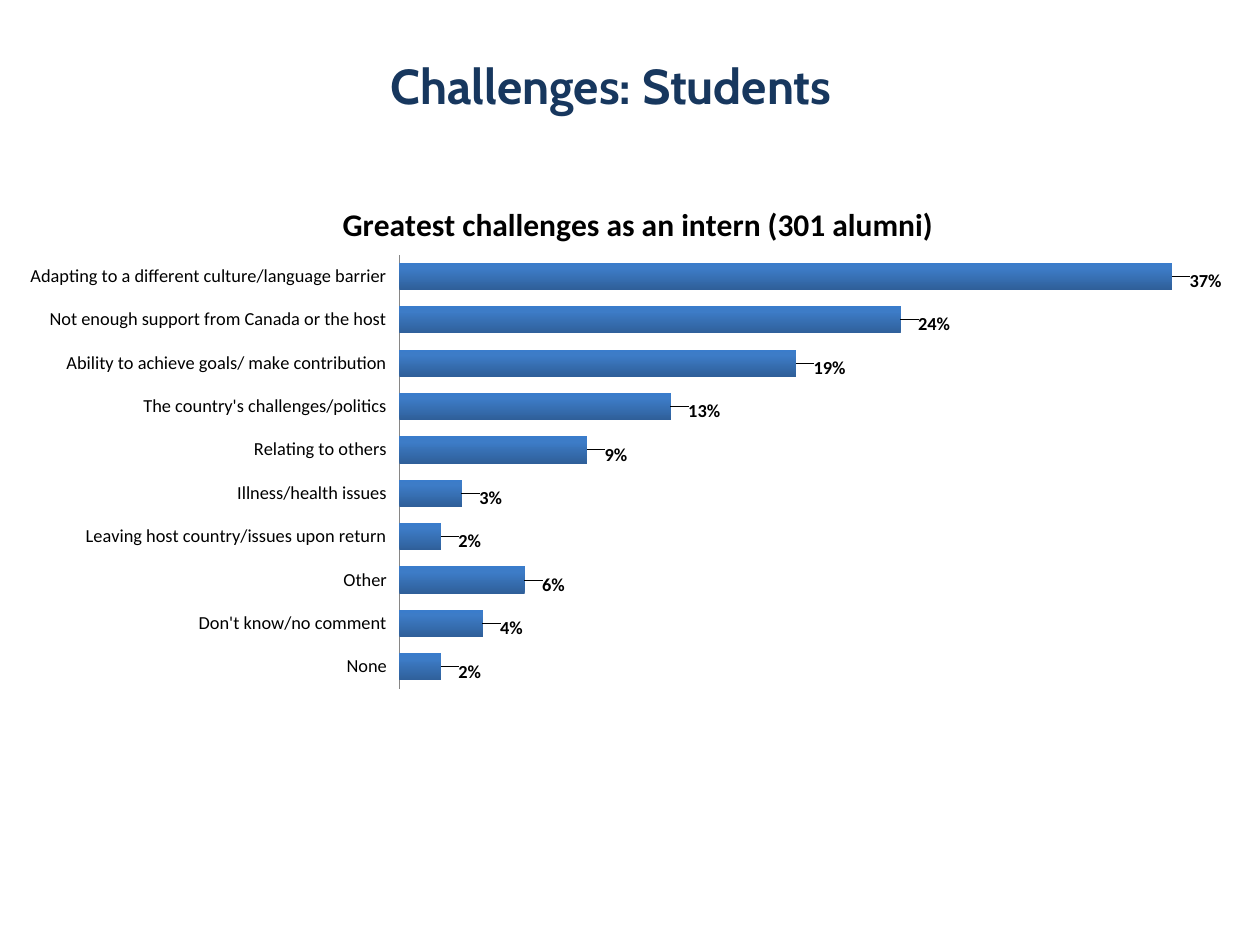
from dataclasses import dataclass

from pptx import Presentation
from pptx.chart.data import CategoryChartData
from pptx.dml.color import RGBColor
from pptx.enum.chart import XL_CHART_TYPE, XL_LABEL_POSITION, XL_TICK_LABEL_POSITION, XL_TICK_MARK
from pptx.enum.text import MSO_ANCHOR, PP_ALIGN
from pptx.oxml import parse_xml
from pptx.oxml.ns import nsdecls
from pptx.util import Inches, Pt

CHALLENGES = {
    "Adapting to a different culture/language barrier": 0.37,
    "Not enough support from Canada or the host": 0.24,
    "Ability to achieve goals/ make contribution": 0.19,
    "The country's challenges/politics": 0.13,
    "Relating to others": 0.09,
    "Illness/health issues": 0.03,
    "Leaving host country/issues upon return": 0.02,
    "Other": 0.06,
    "Don't know/no comment": 0.04,
    "None": 0.02,
}


@dataclass(frozen=True)
class Theme:
    heading_font: str = "Cabin"
    body_font: str = "Calibri"
    heading: str = "17375E"
    text: str = "000000"
    axis: str = "868686"
    bar_stops: tuple = ((0, "2F5F99"), (80, "3D7CC7"), (100, "3A7CCB"))
    heading_size: float = 28
    chart_title_size: float = 18
    label_size: float = 10.5


def manual_layout(target="", **shares):
    """Return a chart layout element with its places given as shares of the chart."""
    inner = f'<c:layoutTarget val="{target}"/>' if target else ""
    if target:
        inner += '<c:xMode val="edge"/><c:yMode val="edge"/>'
    inner += "".join(f'<c:{key} val="{share}"/>' for key, share in shares.items())
    return parse_xml(f'<c:layout {nsdecls("c")}><c:manualLayout>{inner}</c:manualLayout></c:layout>')


class SlideBuilder:
    """Draws styled elements on one slide, placed by shares of its size."""

    def __init__(self, presentation, theme):
        self.presentation = presentation
        self.theme = theme
        self.slide = presentation.slides.add_slide(presentation.slide_layouts[6])

    def box(self, left, top, width, height):
        """Turn shares of the slide into lengths."""
        across, down = self.presentation.slide_width, self.presentation.slide_height
        return int(left * across), int(top * down), int(width * across), int(height * down)

    def style(self, font, size, color, name, bold=False):
        """Set every property of a font."""
        font.size, font.name, font.bold = Pt(size), name, bold
        font.color.rgb = RGBColor.from_string(color)

    def heading(self, text, *shares):
        """Add the centred slide heading."""
        frame = self.slide.shapes.add_textbox(*self.box(*shares)).text_frame
        frame.word_wrap = True
        frame.vertical_anchor = MSO_ANCHOR.MIDDLE
        paragraph = frame.paragraphs[0]
        paragraph.text = text
        paragraph.alignment = PP_ALIGN.CENTER
        theme = self.theme
        self.style(paragraph.font, theme.heading_size, theme.heading, theme.heading_font, True)

    def bar_chart(self, title, values, *shares):
        """Add a horizontal bar chart of percentages."""
        data = CategoryChartData(number_format="0%")
        data.categories = list(values)
        data.add_series("Series 1", list(values.values()))
        chart = self.slide.shapes.add_chart(
            XL_CHART_TYPE.BAR_CLUSTERED, *self.box(*shares), data).chart
        theme = self.theme
        self.style(chart.font, theme.label_size, theme.text, theme.body_font)
        chart.has_legend = False
        self.chart_title(chart, title)
        self.axes(chart)
        plot = chart.plots[0]
        plot.gap_width = 59
        plot.vary_by_categories = False
        self.bars(plot.series[0])

    def chart_title(self, chart, text):
        """Write and place the title of the chart."""
        paragraph = chart.chart_title.text_frame.paragraphs[0]
        paragraph.text = text
        theme = self.theme
        self.style(paragraph.font, theme.chart_title_size, theme.text, theme.body_font, True)
        chart.chart_title.include_in_layout = False
        title = chart.chart_title._element
        for layout in title.findall("{*}layout"):
            title.remove(layout)
        layout = manual_layout(x=0.26, y=0.05)
        for mode in ("yMode", "xMode"):
            layout[0].insert(0, parse_xml(f'<c:{mode} {nsdecls("c")} val="edge"/>'))
        title.find("{*}tx").addnext(layout)

    def axes(self, chart):
        """Show a plain category axis from the top and hide the value axis."""
        category = chart.category_axis
        category.reverse_order = True
        category.major_tick_mark = category.minor_tick_mark = XL_TICK_MARK.NONE
        category.tick_label_position = XL_TICK_LABEL_POSITION.LOW
        category.format.line.color.rgb = RGBColor.from_string(self.theme.axis)
        value = chart.value_axis
        value.minimum_scale, value.maximum_scale = 0, 0.4
        value.has_major_gridlines = False
        value.visible = False
        area = chart._chartSpace.chart.plotArea
        for layout in area.findall("{*}layout"):
            area.remove(layout)
        area.insert(0, manual_layout("inner", x=0.31, y=0.16, w=0.67, h=0.82))

    def bars(self, series):
        """Shade the bars and set a bold value beside each one."""
        theme = self.theme
        series.invert_if_negative = False
        series.format.fill.solid()
        properties = series._element.spPr
        stops = "".join(f'<a:gs pos="{share * 1000}"><a:srgbClr val="{color}"/></a:gs>'
                        for share, color in theme.bar_stops)
        gradient = parse_xml(f'<a:gradFill {nsdecls("a")}><a:gsLst>{stops}</a:gsLst>'
                             '<a:lin ang="16200000" scaled="0"/></a:gradFill>')
        properties.replace(properties.find("{*}solidFill"), gradient)
        labels = series.data_labels
        labels.show_value = True
        labels.number_format, labels.number_format_is_linked = "0%", False
        labels.position = XL_LABEL_POSITION.OUTSIDE_END
        self.style(labels.font, theme.label_size, theme.text, theme.body_font, True)
        for index in range(len(series.values)):
            label = series.points[index].data_label
            self.style(label.font, theme.label_size, theme.text, theme.body_font, True)
            label.position = XL_LABEL_POSITION.OUTSIDE_END
        for label in labels._element.findall("{*}dLbl"):
            label.find("{*}idx").addnext(manual_layout(x=0.01, y=0.01))


def main():
    """Build the slide and save it."""
    presentation = Presentation()
    presentation.slide_width, presentation.slide_height = Inches(10), Inches(7.5)
    builder = SlideBuilder(presentation, Theme())
    builder.heading("Challenges: Students", 0.05, 0.05, 0.87, 0.08)
    builder.bar_chart("Greatest challenges as an intern (301 alumni)", CHALLENGES,
                      0.01, 0.18, 0.99, 0.56)
    presentation.save("out.pptx")


if __name__ == "__main__":
    main()
